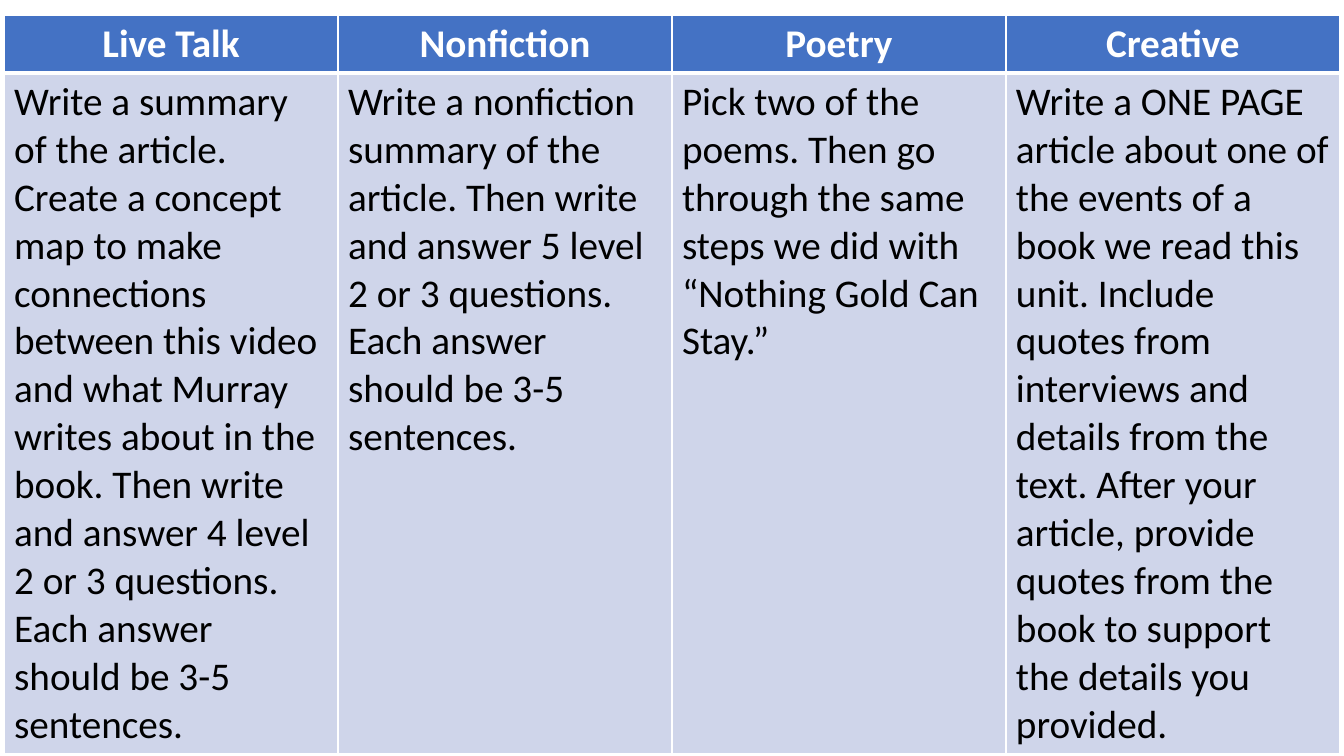
"""Build a slide with a table of four assignment choices."""
from dataclasses import dataclass

from lxml import etree
from pptx import Presentation
from pptx.dml.color import RGBColor
from pptx.enum.text import PP_ALIGN
from pptx.oxml.ns import qn
from pptx.util import Inches, Pt

LEFT, CENTER = PP_ALIGN.LEFT, PP_ALIGN.CENTER

TASKS = {
    "Live Talk": "Write a summary of the article. Create a concept map to make "
    "connections between this video and what Murray writes about in the book. "
    "Then write and answer 4 level 2 or 3 questions. Each answer should be "
    "3-5 sentences.",
    "Nonfiction": "Write a nonfiction summary of the article. Then write and "
    "answer 5 level 2 or 3 questions. Each answer should be 3-5 sentences.",
    "Poetry": "Pick two of the poems. Then go through the same steps we did "
    "with “Nothing Gold Can Stay.”",
    "Creative": "Write a ONE PAGE article about one of the events of a book we "
    "read this unit. Include quotes from interviews and details from the text. "
    "After your article, provide quotes from the book to support the details "
    "you provided.",
}


@dataclass(frozen=True)
class Theme:
    font: str = "Calibri"
    size: int = 28
    head: str = "4472C4"
    body: str = "CFD5EA"
    light: str = "FFFFFF"
    dark: str = "000000"
    thin: int = 1
    thick: int = 3


THEME = Theme()
WIDE, HIGH = 13.33, 7.5
SIDE, TOP = 0.04, 0.15
ROWS = (0.56, 5.73)


def rule(cell, edge, width):
    """Draw one border of a cell."""
    line = etree.SubElement(cell._tc.get_or_add_tcPr(), qn("a:" + edge), w=str(Pt(width)))
    fill = etree.SubElement(line, qn("a:solidFill"))
    etree.SubElement(fill, qn("a:srgbClr"), val=THEME.light)


def write(cell, text, head):
    """Style and fill one cell."""
    heavy = "lnB" if head else "lnT"
    for edge in ("lnL", "lnR", "lnT", "lnB"):
        rule(cell, edge, THEME.thick if edge == heavy else THEME.thin)
    cell.fill.solid()
    cell.fill.fore_color.rgb = RGBColor.from_string(THEME.head if head else THEME.body)
    para = cell.text_frame.paragraphs[0]
    para.alignment = CENTER if head else LEFT
    run = para.add_run()
    run.text = text
    font = run.font
    font.name, font.size, font.bold = THEME.font, Pt(THEME.size), head
    font.color.rgb = RGBColor.from_string(THEME.light if head else THEME.dark)


def main():
    """Make and save the deck."""
    deck = Presentation()
    deck.slide_width, deck.slide_height = Inches(WIDE), Inches(HIGH)
    slide = deck.slides.add_slide(deck.slide_layouts[6])
    span = WIDE - 2 * SIDE
    table = slide.shapes.add_table(
        len(ROWS), len(TASKS), Inches(SIDE), Inches(TOP), Inches(span), Inches(sum(ROWS))
    ).table
    for row, height in zip(table.rows, ROWS):
        row.height = Inches(height)
    for col, (name, task) in enumerate(TASKS.items()):
        table.columns[col].width = Inches(span / len(TASKS))
        write(table.cell(0, col), name, True)
        write(table.cell(1, col), task, False)
    deck.save("out.pptx")


if __name__ == "__main__":
    main()
